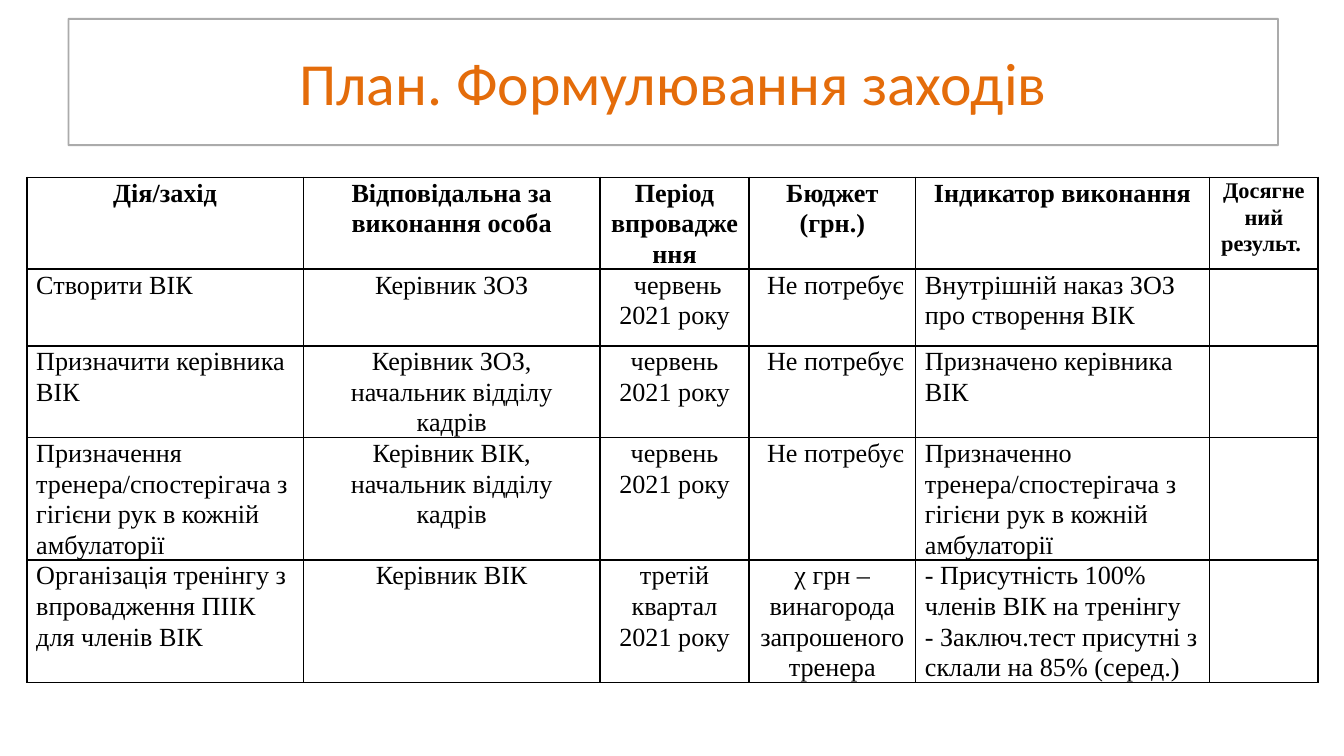
import lxml.etree
import pptx
import pptx.dml.color
import pptx.enum.text
import pptx.oxml
import pptx.oxml.ns
import pptx.util

ORANGE = pptx.dml.color.RGBColor(0xE4, 0x6C, 0x0A)
GREY = pptx.dml.color.RGBColor(0x59, 0x59, 0x59)
BLACK = pptx.dml.color.RGBColor(0, 0, 0)
SLIDE_WIDTH = pptx.util.Inches(10)
SLIDE_HEIGHT = SLIDE_WIDTH * 9 // 16
CENTER = pptx.enum.text.PP_ALIGN.CENTER
LEFT = pptx.enum.text.PP_ALIGN.LEFT

TITLE_BOX = [pptx.util.Inches(value) for value in (0.51, 0.14, 9, 0.94)]
TABLE_BOX = [pptx.util.Inches(value) for value in (0.2, 1.32, 9.61, 4.04)]
COLUMN_WIDTHS = (2.06, 2.21, 1.11, 1.24, 2.19, 0.81)
COLUMN_ALIGNMENTS = (LEFT, CENTER, CENTER, CENTER, LEFT, LEFT)
ROW_HEIGHT = pptx.util.Inches(0.57)
CELL_FORMAT = {
    "margin_left": pptx.util.Inches(0.07),
    "margin_right": pptx.util.Inches(0.07),
    "margin_top": 0,
    "margin_bottom": 0,
}

HEADER = ("Дія/захід", "Відповідальна за виконання особа", "Період впровадження",
          "Бюджет (грн.)", "Індикатор виконання", "Досягнений результ. ")
MEASURES = (
    ("Створити ВІК", "Керівник ЗОЗ", " червень 2021 року", " Не потребує",
     "Внутрішній наказ ЗОЗ про створення ВІК", ""),
    ("Призначити керівника ВІК", "Керівник ЗОЗ, начальник відділу кадрів",
     "червень 2021 року", " Не потребує", "Призначено керівника ВІК", ""),
    ("Призначення тренера/спостерігача з гігієни рук в кожній амбулаторії",
     "Керівник ВІК, начальник відділу кадрів", "червень 2021 року", " Не потребує",
     "Призначенно тренера/спостерігача з гігієни рук в кожній амбулаторії", ""),
    ("Організація тренінгу з впровадження ПІІК для членів ВІК", "Керівник ВІК",
     "третій квартал 2021 року", "χ грн – винагорода запрошеного тренера",
     "- Присутність 100% членів ВІК на тренінгу\n"
     "- Заключ.тест присутні з склали на 85% (серед.)", ""),
)


def set_attributes(target, values):
    for name, value in values.items():
        setattr(target, name, value)


def format_font(font, name, size, color, bold=False):
    set_attributes(font, {"name": name, "size": pptx.util.Pt(size), "bold": bold})
    font.color.rgb = color


def add_title(slide, box, text):
    title = slide.shapes.title
    set_attributes(title, dict(zip(("left", "top", "width", "height"), box)))
    title.line.width = pptx.util.Pt(1)
    title.line.color.rgb = GREY
    color = title.line._ln.find(".//" + pptx.oxml.ns.qn("a:srgbClr"))
    lxml.etree.SubElement(color, pptx.oxml.ns.qn("a:alpha"), val="50000")
    frame = title.text_frame
    frame.text = text
    frame.vertical_anchor = pptx.enum.text.MSO_ANCHOR.MIDDLE
    paragraph = frame.paragraphs[0]
    paragraph.alignment = CENTER
    format_font(paragraph.runs[0].font, "Calibri", 32, ORANGE)


def add_borders(cell):
    """Draw a 1 pt black line on all four sides, ahead of the cell's fill."""
    properties = cell._tc.get_or_add_tcPr()
    for position, side in enumerate(("lnL", "lnR", "lnT", "lnB")):
        properties.insert(position, pptx.oxml.parse_xml(
            f'<a:{side} {pptx.oxml.ns.nsdecls("a")} w="{pptx.util.Pt(1)}">'
            f'<a:solidFill><a:srgbClr val="{BLACK}"/></a:solidFill></a:{side}>'))


def fill_cell(cell, text, alignment, size, bold):
    set_attributes(cell, CELL_FORMAT)
    cell.fill.background()
    add_borders(cell)
    cell.text = text
    for paragraph in cell.text_frame.paragraphs:
        set_attributes(paragraph, {"alignment": alignment, "line_spacing": 1.06})
        for run in paragraph.runs:
            format_font(run.font, "Times New Roman", size, BLACK, bold)


def add_plan_table(slide, box):
    rows = (HEADER,) + MEASURES
    left, top, width, height = box
    frame = slide.shapes.add_table(len(rows), len(HEADER), left, top, width,
                                   ROW_HEIGHT * len(rows))
    table = frame.table
    set_attributes(table, {"first_row": False, "horz_banding": False})
    for column, share in zip(table.columns, COLUMN_WIDTHS):
        column.width = int(width * share / sum(COLUMN_WIDTHS))
    for row_index, row in enumerate(rows):
        is_header = row_index == 0
        for column_index, text in enumerate(row):
            is_narrow = is_header and column_index == len(HEADER) - 1
            fill_cell(table.cell(row_index, column_index), text,
                      CENTER if is_header else COLUMN_ALIGNMENTS[column_index],
                      12 if is_narrow else 14, is_header)
    frame.height = height


def main():
    presentation = pptx.Presentation()
    set_attributes(presentation, {"slide_width": SLIDE_WIDTH, "slide_height": SLIDE_HEIGHT})
    slide = presentation.slides.add_slide(presentation.slide_layouts.get_by_name("Title Only"))
    add_title(slide, TITLE_BOX, "План. Формулювання заходів")
    add_plan_table(slide, TABLE_BOX)
    presentation.save("out.pptx")


if __name__ == "__main__":
    main()
